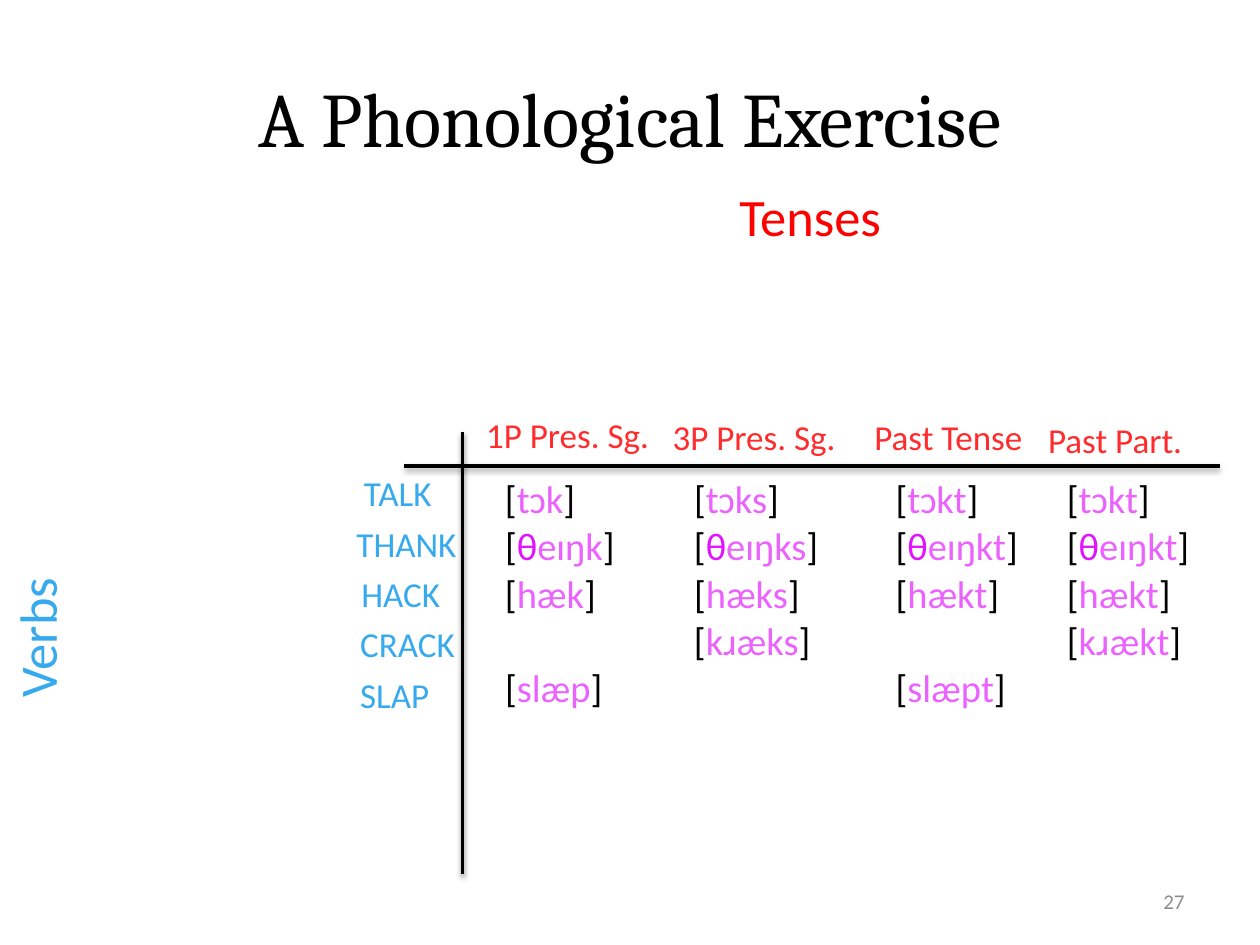
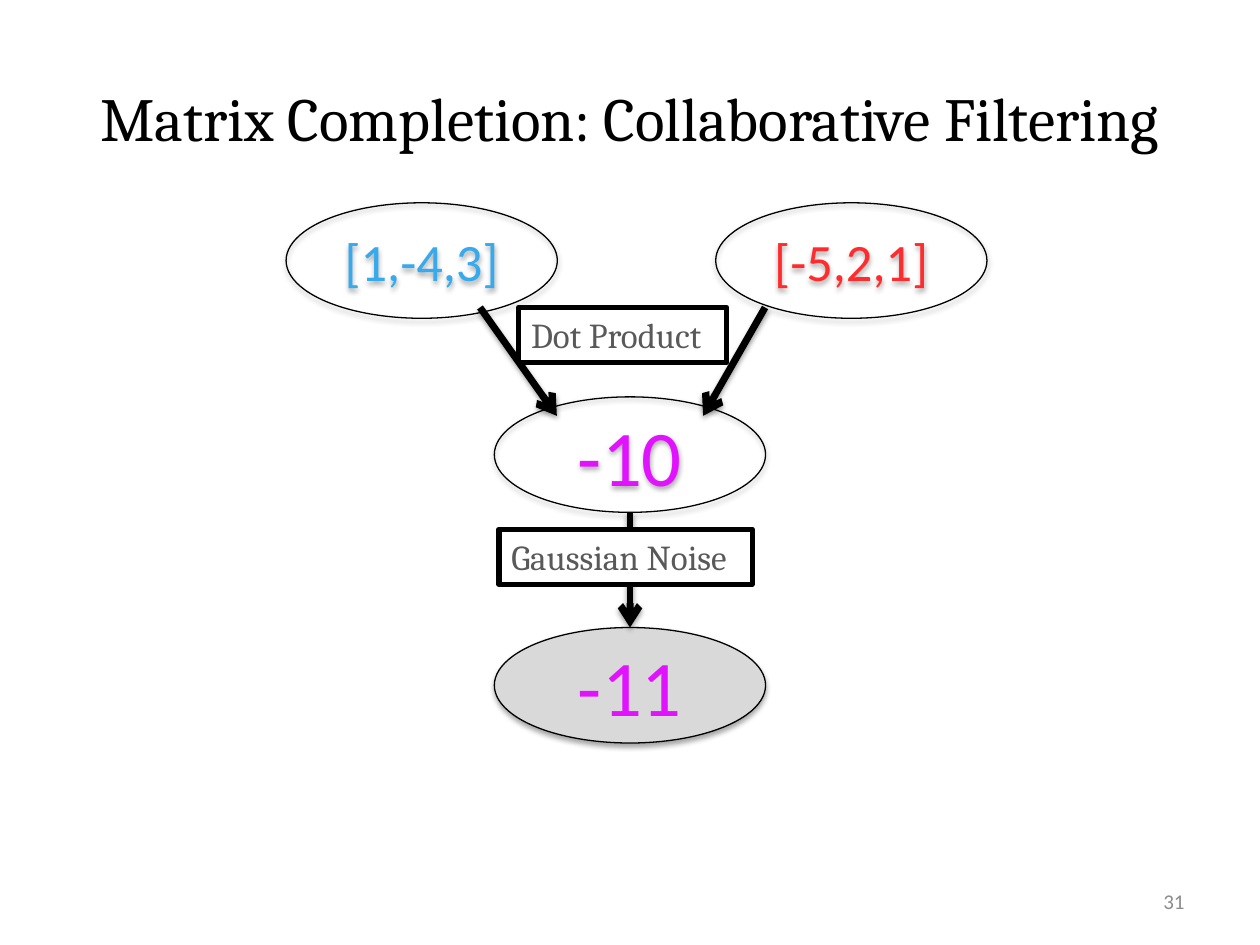
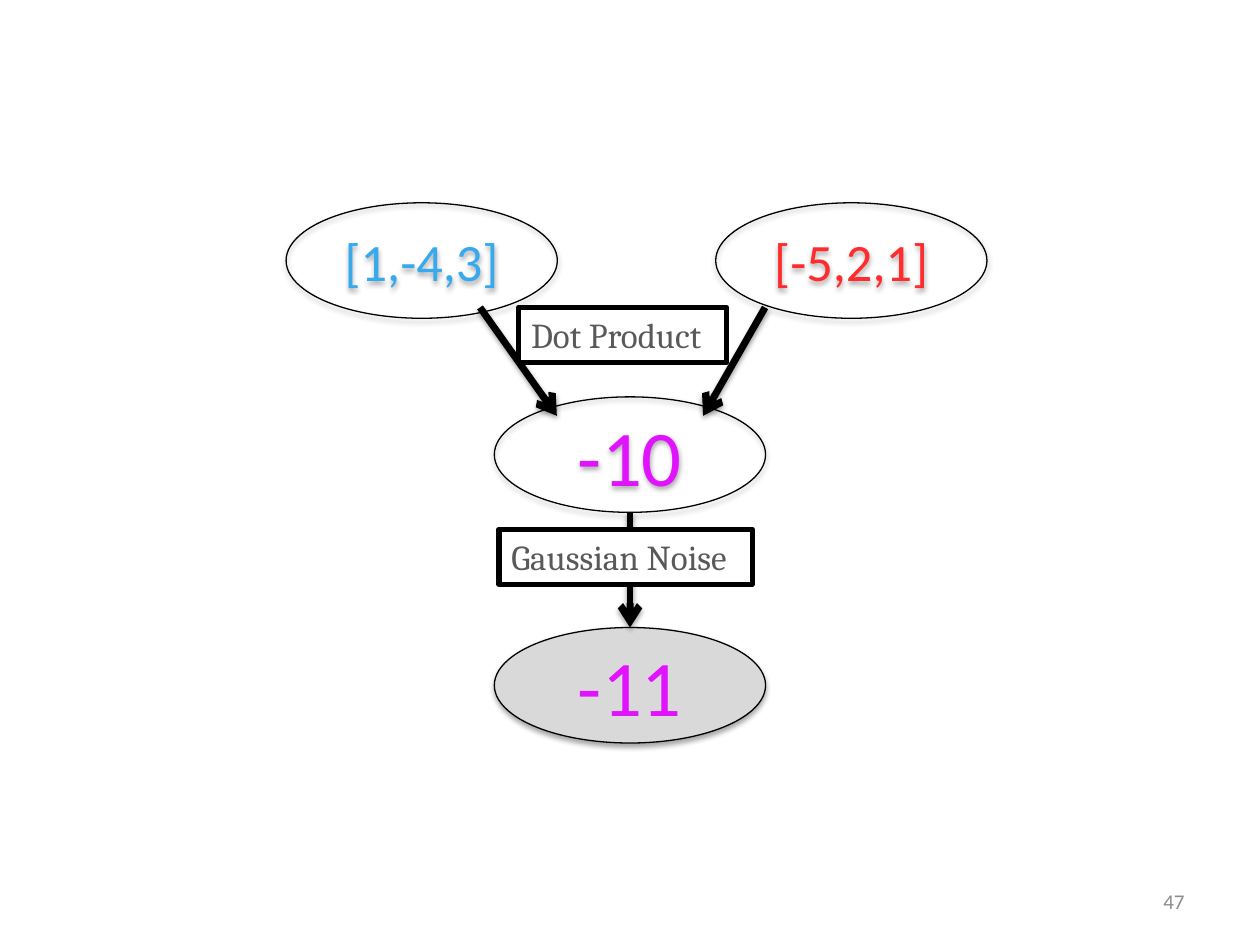
from lxml import etree
from pptx import Presentation
from pptx import util as u
from pptx.dml.color import RGBColor
from pptx.enum import shapes, text
from pptx.oxml.ns import qn

BLACK, WHITE, GREY = "000000", "FFFFFF", "D9D9D9"
BLUE, RED, BRIGHT_RED = "37AAED", "FF2B2C", "FF0000"
PINK, MAGENTA = "EB62FF", "E113FF"
LABEL_GREY, NUMBER_GREY = "595959", "8C8C8C"
BODY, SERIF = "Calibri", "Cambria"
ALIGN, ANCHOR = text.PP_ALIGN, text.MSO_ANCHOR

TENSES = [("1P Pres. Sg.", 270.7, 232.6, 108.7), ("3P Pres. Sg.", 377.3, 234, 108.7),
          ("Past Tense", 492.5, 234, 102.2), ("Past Part.", 591.8, 235.4, 92.9)]
VERBS = [("TALK", 200.9, 56.2), ("THANK", 196.6, 73.4), ("HACK", 199.4, 61.2),
         ("CRACK", 198.7, 69.8), ("SLAP", 198.7, 54.7)]
FORM_LEFTS = [281.5, 389.5, 504.7, 602.6]
FORMS = [
    [("tɔk", 55.4), ("tɔks", 64.1), ("tɔkt", 62.6), ("tɔkt", 62.6)],
    [("θeɪŋk", 77.8), ("θeɪŋks", 86.4), ("θeɪŋkt", 85.7), ("θeɪŋkt", 85.7)],
    [("hæk", 67), ("hæks", 75.6), ("hækt", 74.9), ("hækt", 74.9)],
    [None, ("kɹæks", 82.1), None, ("kɹækt", 80.6)],
    [("slæp", 70.6), None, ("slæpt", 78.5), None],
]


def rgb(code):
    """Turn a hex string into a colour."""
    return RGBColor.from_string(code)


def box(left, top, width, height):
    """Return a position and size given in points."""
    return [u.Pt(length) for length in (left, top, width, height)]


def write(shape, runs, size, font=BODY, align=ALIGN.LEFT, anchor=ANCHOR.TOP, wrap=True):
    """Write one paragraph of (wording, colour) runs."""
    frame = shape.text_frame
    frame.word_wrap = wrap
    frame.vertical_anchor = anchor
    if not wrap:
        frame.auto_size = text.MSO_AUTO_SIZE.SHAPE_TO_FIT_TEXT
    paragraph = frame.paragraphs[0]
    paragraph.alignment = align
    for wording, color in runs:
        run = paragraph.add_run()
        run.text = wording
        run.font.size, run.font.name = u.Pt(size), font
        run.font.color.rgb = rgb(color)


def label(slide, place, runs, size, **style):
    """Add a text box."""
    caption = slide.shapes.add_textbox(*box(*place))
    write(caption, runs, size, **style)
    return caption


def cast_shadow(shape, opacity, distance):
    """Give a shape or line a soft shadow straight below."""
    properties = shape._element.spPr
    effects = properties.find(qn("a:effectLst"))
    if effects is None:
        effects = etree.SubElement(properties, qn("a:effectLst"))
    shadow = etree.SubElement(effects, qn("a:outerShdw"), blurRad=str(u.Pt(3.1)),
                              dist=str(u.Pt(distance)), dir="5400000", rotWithShape="0")
    color = etree.SubElement(shadow, qn("a:srgbClr"), val=BLACK)
    etree.SubElement(color, qn("a:alpha"), val=str(opacity * 1000))


def rule(slide, start, end, weight, arrow=False, target=None):
    """Draw a black line, optionally with an arrowhead and a joined target."""
    line = slide.shapes.add_connector(shapes.MSO_CONNECTOR.STRAIGHT, *box(*start, *end))
    if target is not None:
        line.end_connect(target, 0)
    line.line.width = u.Pt(weight)
    line.line.color.rgb = rgb(BLACK)
    if arrow:
        etree.SubElement(line.line._get_or_add_ln(), qn("a:tailEnd"), type="arrow")
    cast_shadow(line, 38, 1.6)


def outlined(slide, kind, place, weight, fill):
    """Add a black-outlined shape, see-through when fill is None."""
    shape = slide.shapes.add_shape(kind, *box(*place))
    if fill:
        shape.fill.solid()
        shape.fill.fore_color.rgb = rgb(fill)
    else:
        shape.fill.background()
    shape.line.width = u.Pt(weight)
    shape.line.color.rgb = rgb(BLACK)
    shape.shadow.inherit = False
    return shape


def node(slide, left, top, value, color, size, fill=None):
    """Add an elliptical node holding a value."""
    ellipse = outlined(slide, shapes.MSO_SHAPE.OVAL, (left, top, 155, 66), 0.75, fill)
    cast_shadow(ellipse, 35, 1.8)
    write(ellipse, [(value, color)], size, align=ALIGN.CENTER, anchor=ANCHOR.MIDDLE)
    return ellipse


def operation(slide, left, top, width, wording):
    """Add a framed name of an operation."""
    frame = outlined(slide, shapes.MSO_SHAPE.RECTANGLE, (left, top, width, 31.5), 3, WHITE)
    write(frame, [(wording, LABEL_GREY)], 20, font=SERIF, wrap=False)


def new_slide(deck, number, title=None, title_size=44):
    """Add a blank slide with its number and optional title."""
    slide = deck.slides.add_slide(deck.slide_layouts[6])
    if title:
        label(slide, (36, 21.6, 648, 90), [(title, BLACK)], title_size, font=SERIF,
              align=ALIGN.CENTER, anchor=ANCHOR.MIDDLE)
    label(slide, (516, 500.5, 168, 28.75), [(number, NUMBER_GREY)], 12,
          align=ALIGN.RIGHT, anchor=ANCHOR.MIDDLE)
    return slide


def form_runs(form):
    """Bracket a transcription and highlight a leading theta."""
    stem = form.removeprefix("θ")
    theta = [("θ", MAGENTA)] if stem != form else []
    return [("[", BLACK), *theta, (stem, PINK), ("]", BLACK)]


def paradigm(slide):
    """Lay out verbs against tenses with their pronounced forms."""
    label(slide, (415.4, 101.5, 99.4, 43.6), [("Tenses", BRIGHT_RED)], 30, wrap=False)
    verbs_heading = label(slide, (-20.9, 342, 83.5, 43.6), [("Verbs", BLUE)], 30, wrap=False)
    verbs_heading.rotation = 270
    for tense, left, top, width in TENSES:
        label(slide, (left, top, width, 31.5), [(tense, RED)], 20, wrap=False)
    rule(slide, (264.25, 247), (264.25, 499.7), 2)
    rule(slide, (697, 266.4), (231.1, 266.4), 2)
    for row, ((verb, left, width), forms) in enumerate(zip(VERBS, FORMS)):
        label(slide, (left, 266 + 28.8 * row, width, 31.5), [(verb, BLUE)], 20, wrap=False)
        for form_left, entry in zip(FORM_LEFTS, forms):
            if entry:
                form, form_width = entry
                label(slide, (form_left, 268 + 27 * row, form_width, 33.9),
                      form_runs(form), 22, wrap=False)


def factor_diagram(slide):
    """Draw two vectors leading to their product and a noisy observation."""
    node(slide, 163.5, 115.9, "[1,-4,3]", BLUE, 30)
    node(slide, 409, 115.9, "[-5,2,1]", RED, 30)
    node(slide, 282.5, 226.8, "-10", MAGENTA, 45)
    observed = node(slide, 282.5, 358.6, "-11", MAGENTA, 45, GREY)
    rule(slide, (437.2, 175.7), (401.8, 237.6), 4, arrow=True)
    rule(slide, (274.3, 175.7), (318.2, 237.6), 4, arrow=True)
    rule(slide, (360, 292.8), (360, 358.6), 4, arrow=True, target=observed)
    operation(slide, 296.4, 175.7, 118.8, "Dot Product")
    operation(slide, 285.1, 302.4, 144.7, "Gaussian Noise")


def main():
    """Build and save the deck."""
    deck = Presentation()
    deck.slide_width, deck.slide_height = u.Pt(720), u.Pt(540)
    paradigm(new_slide(deck, "27", "A Phonological Exercise"))
    factor_diagram(new_slide(deck, "31", "Matrix Completion: Collaborative Filtering", 35))
    factor_diagram(new_slide(deck, "47"))
    deck.save("out.pptx")


if __name__ == "__main__":
    main()
